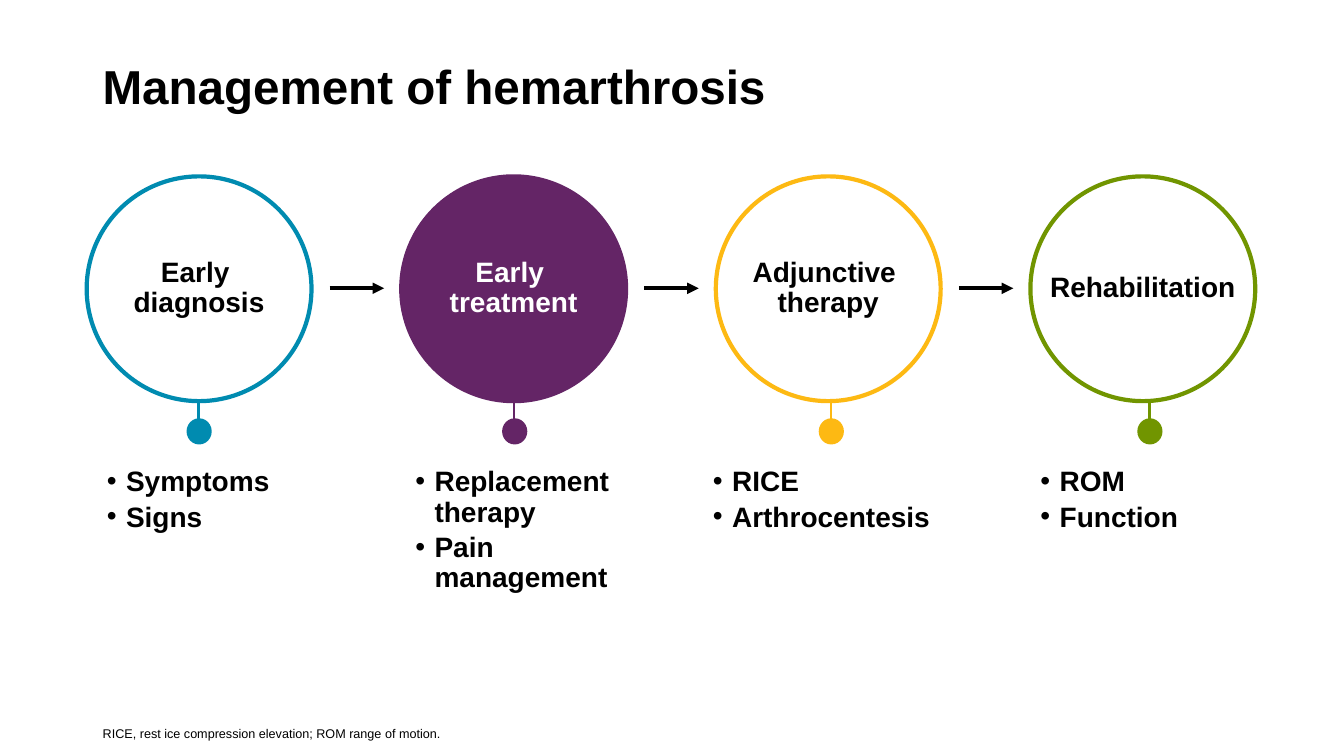
from dataclasses import dataclass

import lxml.etree
import pptx
import pptx.dml.color
import pptx.enum.shapes
import pptx.enum.text
import pptx.oxml.ns
import pptx.util

PX = 9144
FONT = "Arial"
COLORS = {
    "black": "000000",
    "white": "FFFFFF",
    "teal": "008BB0",
    "purple": "642566",
    "amber": "FDB913",
    "green": "719500",
}
SHAPES = pptx.enum.shapes.MSO_SHAPE
ANCHOR = pptx.enum.text.MSO_ANCHOR
ALIGN = pptx.enum.text.PP_ALIGN

CIRCLE_LEFT, CIRCLE_TOP, CIRCLE_SIZE, STEP = 86, 175, 223, 312
ARROW_LEFT, ARROW_LENGTH, ARROW_Y = 327, 54, 286
STEM_TOP, DOT_TOP, DOT_WIDTH, DOT_HEIGHT = 343, 415, 25, 26
LIST_TOP, LIST_HEIGHT, INSET, INDENT = 450, 149, 14, 19


@dataclass(frozen=True)
class Stage:
    label: str
    color: str
    fill: str
    text_color: str
    stem_x: int
    list_left: int
    list_width: int
    points: tuple[str, ...]


STAGES = [
    Stage("Early \ndiagnosis", "teal", "white", "black", 197, 92, 223,
          ("Symptoms", "Signs")),
    Stage("Early \ntreatment", "purple", "purple", "white", 510, 398, 223,
          ("Replacement therapy", "Pain management")),
    Stage("Adjunctive \ntherapy", "amber", "white", "black", 824, 693, 262,
          ("RICE", "Arthrocentesis")),
    Stage("Rehabilitation", "green", "white", "black", 1140, 1018, 223,
          ("ROM", "Function")),
]


def px(n: int) -> pptx.util.Emu:
    return pptx.util.Emu(n * PX)


def rgb(name: str) -> pptx.dml.color.RGBColor:
    return pptx.dml.color.RGBColor.from_string(COLORS[name])


def add_sub(parent, tag: str, **attrs: str):
    return lxml.etree.SubElement(parent, pptx.oxml.ns.qn(tag), attrs)


def write(sp, paragraphs: tuple[str, ...], *, size: int = 20, bold: bool = True,
          color: str = "black", anchor=ANCHOR.TOP, align=ALIGN.LEFT,
          inset: tuple[int, int, int, int] = (10, 5, 10, 5), wrap: bool = True,
          spacing: float = 1.0, after: float = 0, bullet: bool = False) -> None:
    tf = sp.text_frame
    tf.word_wrap = wrap
    tf.vertical_anchor = anchor
    tf.margin_left, tf.margin_top, tf.margin_right, tf.margin_bottom = map(px, inset)
    for i, text in enumerate(paragraphs):
        p = tf.paragraphs[0] if i == 0 else tf.add_paragraph()
        p.text = text
        p.alignment = align
        p.line_spacing = spacing
        p.space_after = pptx.util.Pt(after)
        if bullet:
            pPr = p._p.get_or_add_pPr()
            pPr.set("marL", str(px(INDENT)))
            pPr.set("indent", str(px(-INDENT)))
            add_sub(pPr, "a:buFont", typeface=FONT)
            add_sub(pPr, "a:buChar", char="•")
        for r in p.runs:
            r.font.name = FONT
            r.font.size = pptx.util.Pt(size)
            r.font.bold = bold
            r.font.color.rgb = rgb(color)


def add_text(s, left: int, top: int, width: int, height: int, text: str, **fmt) -> None:
    write(s.shapes.add_textbox(px(left), px(top), px(width), px(height)), (text,), **fmt)


def add_box(s, kind, left: int, top: int, width: int, height: int, fill: str,
            line: str | None = None, weight: float = 1):
    sp = s.shapes.add_shape(kind, px(left), px(top), px(width), px(height))
    sp.shadow.inherit = False
    sp.fill.solid()
    sp.fill.fore_color.rgb = rgb(fill)
    if line:
        sp.line.color.rgb = rgb(line)
        sp.line.width = pptx.util.Pt(weight)
    else:
        sp.line.fill.background()
    return sp


def add_line(s, x1: int, y1: int, x2: int, y2: int, color: str, weight: float,
             arrow: bool = False) -> None:
    cx = s.shapes.add_connector(pptx.enum.shapes.MSO_CONNECTOR.STRAIGHT,
                                px(x1), px(y1), px(x2), px(y2))
    cx.line.color.rgb = rgb(color)
    cx.line.width = pptx.util.Pt(weight)
    if arrow:
        add_sub(cx.line._get_or_add_ln(), "a:tailEnd", type="triangle")
    add_sub(cx._element.spPr, "a:effectLst")


def add_stage(s, i: int, stage: Stage) -> None:
    add_line(s, stage.stem_x, STEM_TOP, stage.stem_x, DOT_TOP + DOT_HEIGHT // 2,
             stage.color, 1.75)
    circle = add_box(s, SHAPES.OVAL, CIRCLE_LEFT + i * STEP, CIRCLE_TOP,
                     CIRCLE_SIZE, CIRCLE_SIZE, stage.fill, stage.color, 3)
    write(circle, (stage.label,), color=stage.text_color, anchor=ANCHOR.MIDDLE,
          align=ALIGN.CENTER, inset=(0, INSET, 0, INSET), wrap=False, spacing=0.9)
    points = add_box(s, SHAPES.RECTANGLE, stage.list_left, LIST_TOP,
                     stage.list_width, LIST_HEIGHT, "white", "white")
    write(points, stage.points, inset=(INSET,) * 4, spacing=0.9, after=3.5, bullet=True)
    add_box(s, SHAPES.OVAL, stage.stem_x - DOT_WIDTH // 2, DOT_TOP,
            DOT_WIDTH, DOT_HEIGHT, stage.color)


def main() -> None:
    prs = pptx.Presentation()
    prs.slide_width, prs.slide_height = px(1333), px(750)
    s = prs.slides.add_slide(prs.slide_layouts[6])
    add_text(s, 92, 25, 1150, 119, "Management of hemarthrosis",
             size=34, anchor=ANCHOR.MIDDLE)
    for i, stage in enumerate(STAGES):
        add_stage(s, i, stage)
    for i in range(len(STAGES) - 1):
        x = ARROW_LEFT + i * STEP
        add_line(s, x, ARROW_Y, x + ARROW_LENGTH, ARROW_Y, "black", 2.75, arrow=True)
    add_text(s, 92, 695, 1085, 40,
             "RICE, rest ice compression elevation; ROM range of motion.",
             size=9, bold=False, anchor=ANCHOR.BOTTOM, inset=(10, 5, 10, 0))
    prs.save("out.pptx")


if __name__ == "__main__":
    main()
